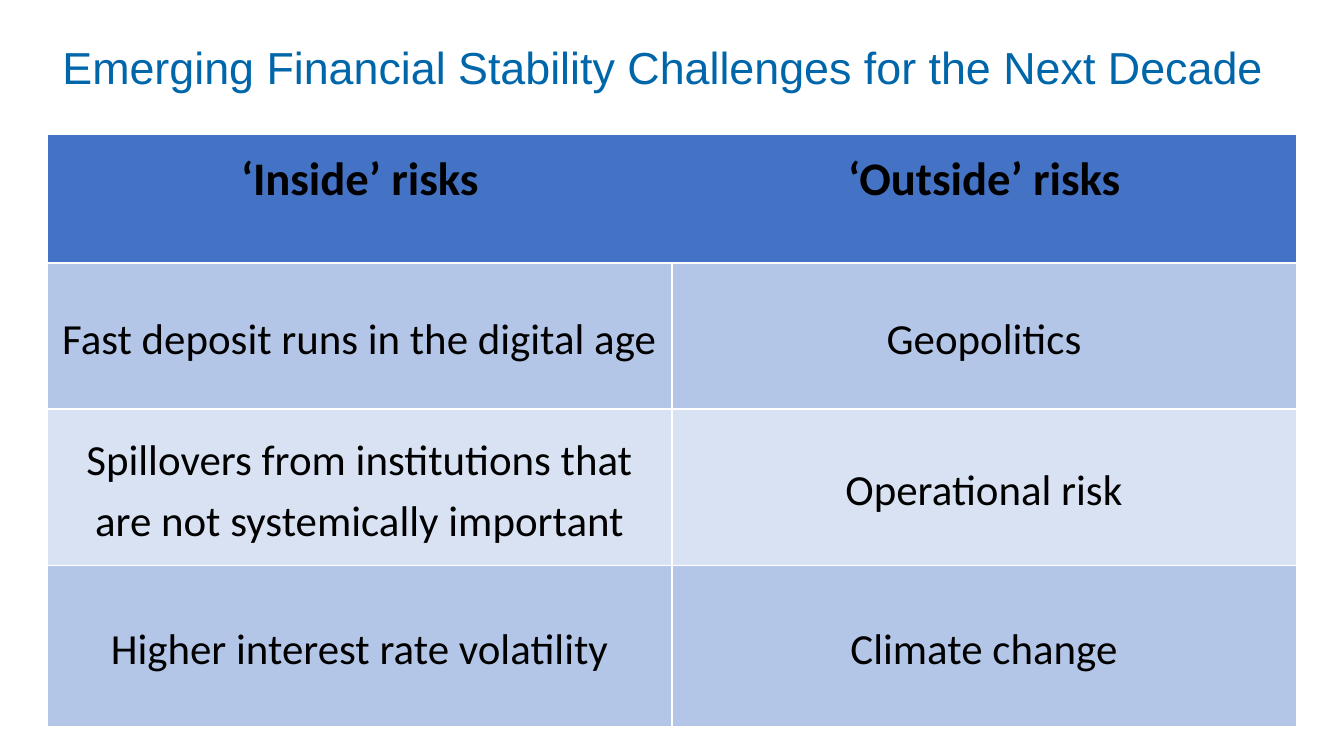
from lxml import etree
from pptx import Presentation
from pptx import util as u
from pptx.dml.color import RGBColor
from pptx.enum import text
from pptx.oxml.ns import qn

PX = 9525
COLORS = {
    "title": "0066AA",
    "text": "000000",
    "header": "4472C4",
    "dark band": "B4C6E7",
    "light band": "D9E2F3",
    "border": "FFFFFF",
}
RISKS = [
    ("‘Inside’ risks", "‘Outside’ risks"),
    ("Fast deposit runs in the digital age", "Geopolitics"),
    ("Spillovers from institutions that are not systemically important", "Operational risk"),
    ("Higher interest rate volatility", "Climate change"),
]
ROW_HEIGHTS = [92, 104, 112, 115]
ROW_FILLS = ["header", "dark band", "light band", "dark band"]
COLUMN_WIDTH = 446


def style_font(font, name, size, color, bold=False):
    font.name = name
    font.size = u.Pt(size)
    font.bold = bold
    font.color.rgb = RGBColor.from_string(COLORS[color])


def add_borders(cell, visible_sides):
    properties = cell._tc.get_or_add_tcPr()
    for index, side in enumerate("LRTB"):
        line = etree.Element(qn(f"a:ln{side}"), w=str(u.Pt(1)))
        if side in visible_sides:
            fill = etree.SubElement(line, qn("a:solidFill"))
            etree.SubElement(fill, qn("a:srgbClr"), val=COLORS["border"])
        else:
            etree.SubElement(line, qn("a:noFill"))
        properties.insert(index, line)


deck = Presentation()
deck.slide_width, deck.slide_height = 960 * PX, 540 * PX
page = deck.slides.add_slide(deck.slide_layouts[5])

title = page.shapes.title
title.left, title.top, title.width, title.height = 35 * PX, 15 * PX, 893 * PX, 57 * PX
frame = title.text_frame
frame.text = "Emerging Financial Stability Challenges for the Next Decade"
frame.vertical_anchor = text.MSO_ANCHOR.BOTTOM
frame.auto_size = text.MSO_AUTO_SIZE.NONE
para = frame.paragraphs[0]
para.alignment = text.PP_ALIGN.LEFT
para.line_spacing = 0.9
style_font(para.runs[0].font, "Arial", 24, "title")

table = page.shapes.add_table(
    len(RISKS), 2, 34 * PX, 96 * PX, 2 * COLUMN_WIDTH * PX, sum(ROW_HEIGHTS) * PX
).table
for column in table.columns:
    column.width = COLUMN_WIDTH * PX

for r, (labels, height, fill) in enumerate(zip(RISKS, ROW_HEIGHTS, ROW_FILLS)):
    is_header = r == 0
    table.rows[r].height = height * PX
    for c, label in enumerate(labels):
        cell = table.cell(r, c)
        cell.text_frame.text = label
        cell.margin_left = cell.margin_right = 8 * PX
        cell.margin_top = cell.margin_bottom = 6 * PX
        cell.vertical_anchor = text.MSO_ANCHOR.TOP if is_header else text.MSO_ANCHOR.MIDDLE
        cell.fill.solid()
        cell.fill.fore_color.rgb = RGBColor.from_string(COLORS[fill])
        add_borders(cell, "TB" if is_header else "LRTB")
        para = cell.text_frame.paragraphs[0]
        para.alignment = text.PP_ALIGN.CENTER
        para.line_spacing = 1.15
        para.space_after = u.Pt(10)
        style_font(para.runs[0].font, "Calibri", 25 if is_header else 23, "text", is_header)

deck.save("out.pptx")
